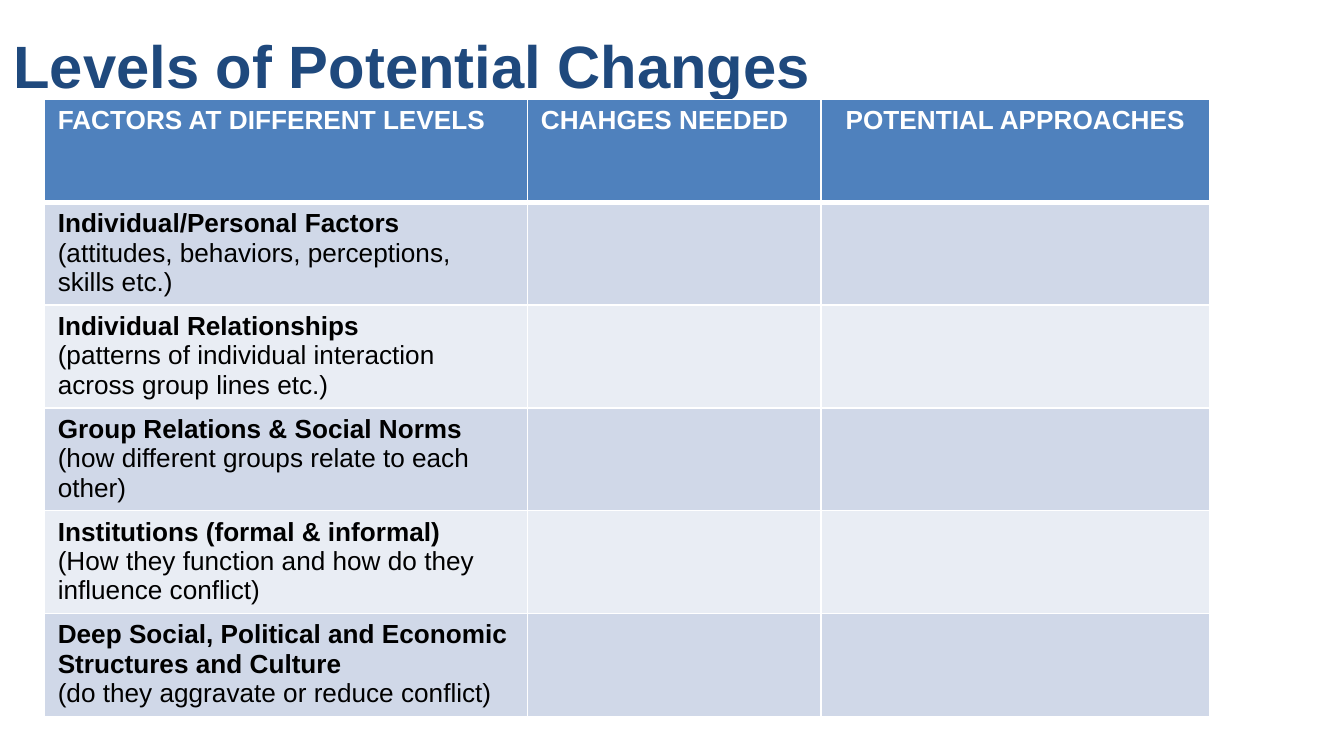
from lxml import etree
from pptx import Presentation
from pptx import util as u
from pptx.dml.color import RGBColor
from pptx.enum import text
from pptx.oxml.ns import qn

PX = 4572  # 200 px to the inch
WHITE, BLACK, NAVY, BLUE = "FFFFFF", "000000", "1F497D", "4F81BD"
BANDS = ["D0D8E8", "E9EDF4"]
HEADERS = ["FACTORS AT DIFFERENT LEVELS", "CHAHGES NEEDED", "POTENTIAL APPROACHES"]
FACTORS = [
    ("Individual/Personal Factors", "(attitudes, behaviors, perceptions, skills etc.)"),
    ("Individual Relationships",
     "(patterns of individual interaction across group lines etc.)"),
    ("Group Relations & Social Norms", "(how different groups relate to each other)"),
    ("Institutions (formal & informal)",
     "(How they function and how do they influence conflict)"),
    ("Deep Social, Political and Economic Structures and Culture",
     "(do they aggravate or reduce conflict)"),
]
COL_WIDTHS = [719, 437, 578]
ROW_HEIGHT = 153


def write(p, words, size, color, bold):
    r = p.add_run()
    r.text = words
    for name, value in {"name": "Arial", "size": u.Pt(size), "bold": bold}.items():
        setattr(r.font, name, value)
    r.font.color.rgb = RGBColor.from_string(color)


def style_cell(cell, fill, top=1, bottom=1):
    """Give the cell white borders, with top and bottom widths in points, and a fill."""
    tcPr = cell._tc.get_or_add_tcPr()
    for side, width in {"L": 1, "R": 1, "T": top, "B": bottom}.items():
        ln = etree.SubElement(tcPr, qn(f"a:ln{side}"), w=str(u.Pt(width)))
        solid = etree.SubElement(ln, qn("a:solidFill"))
        etree.SubElement(solid, qn("a:srgbClr"), val=WHITE)
    cell.fill.solid()
    cell.fill.fore_color.rgb = RGBColor.from_string(fill)


prs = Presentation()
prs.slide_width, prs.slide_height = 2000 * PX, 1125 * PX
s = prs.slides.add_slide(prs.slide_layouts[5])

title = s.shapes.title
for name, value in {"left": 0, "top": 45, "width": 1800, "height": 102}.items():
    setattr(title, name, value * PX)
tf = title.text_frame
tf.auto_size = text.MSO_AUTO_SIZE.NONE
tf.vertical_anchor = text.MSO_ANCHOR.MIDDLE
p = tf.paragraphs[0]
p.alignment = text.PP_ALIGN.LEFT
write(p, "Levels of Potential Changes", 32, NAVY, True)

rows = len(FACTORS) + 1
table = s.shapes.add_table(rows, len(HEADERS), 66 * PX, 148 * PX,
                           sum(COL_WIDTHS) * PX, rows * ROW_HEIGHT * PX).table
for col, width in zip(table.columns, COL_WIDTHS):
    col.width = width * PX
for row in table.rows:
    row.height = ROW_HEIGHT * PX

for c, header in enumerate(HEADERS):
    cell = table.cell(0, c)
    style_cell(cell, BLUE, bottom=3)
    write(cell.text_frame.paragraphs[0], header, 14, WHITE, True)
table.cell(0, 2).text_frame.paragraphs[0].alignment = text.PP_ALIGN.CENTER

for i, (factor, detail) in enumerate(FACTORS):
    for c in range(len(HEADERS)):
        style_cell(table.cell(i + 1, c), BANDS[i % 2], top=3 if i == 0 else 1)
    tf = table.cell(i + 1, 0).text_frame
    write(tf.paragraphs[0], factor, 14, BLACK, True)
    write(tf.add_paragraph(), detail, 14, BLACK, False)

prs.save("out.pptx")
